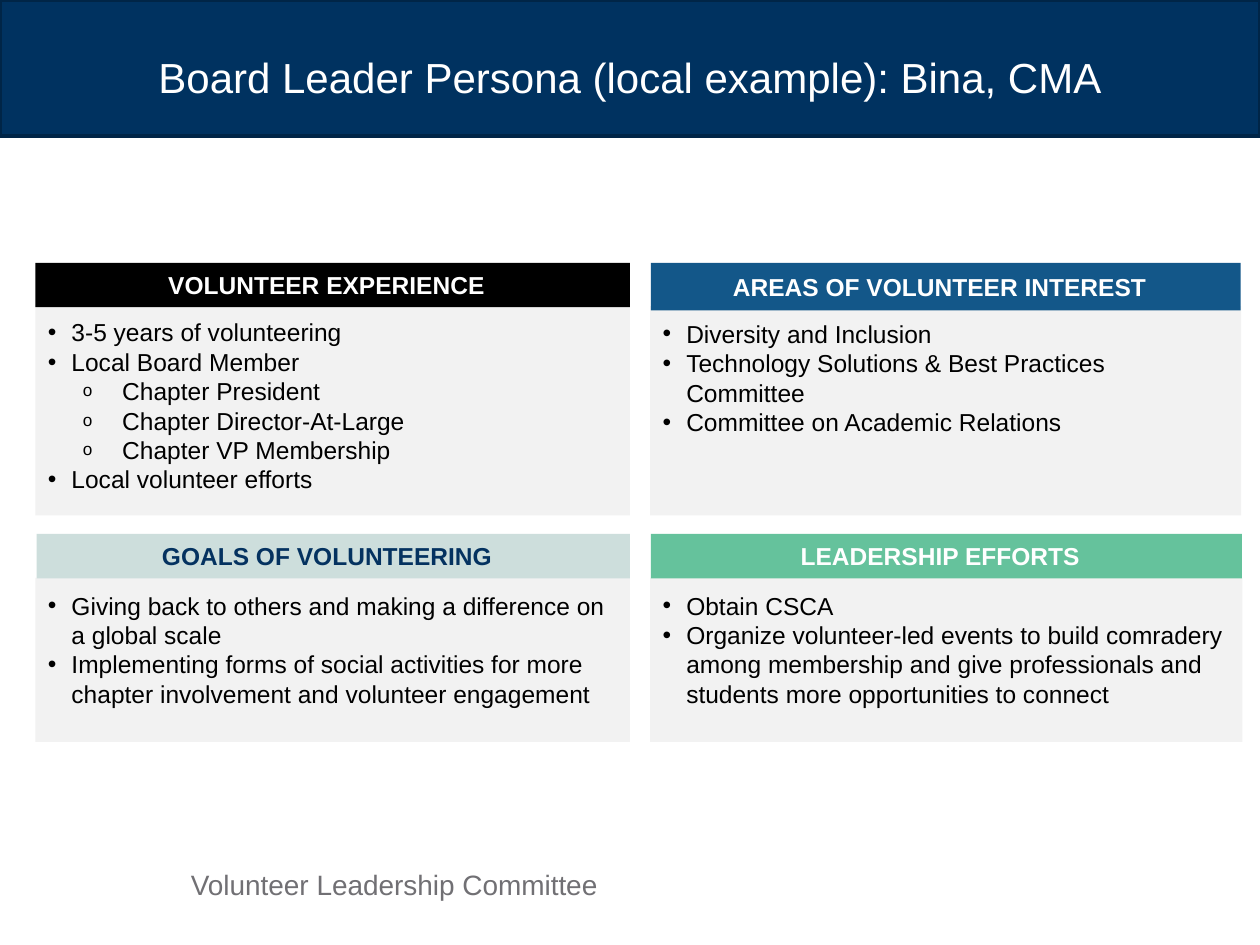
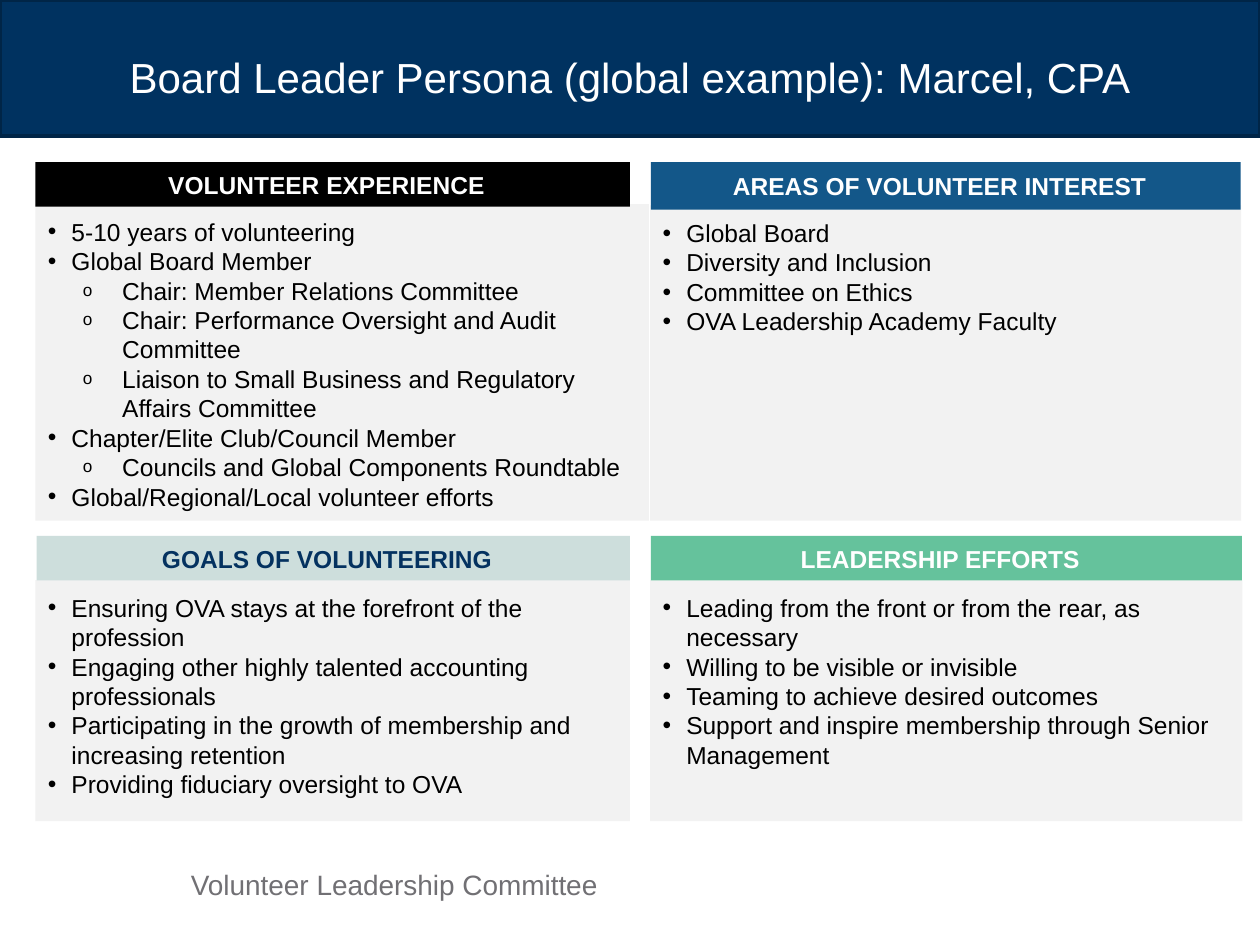
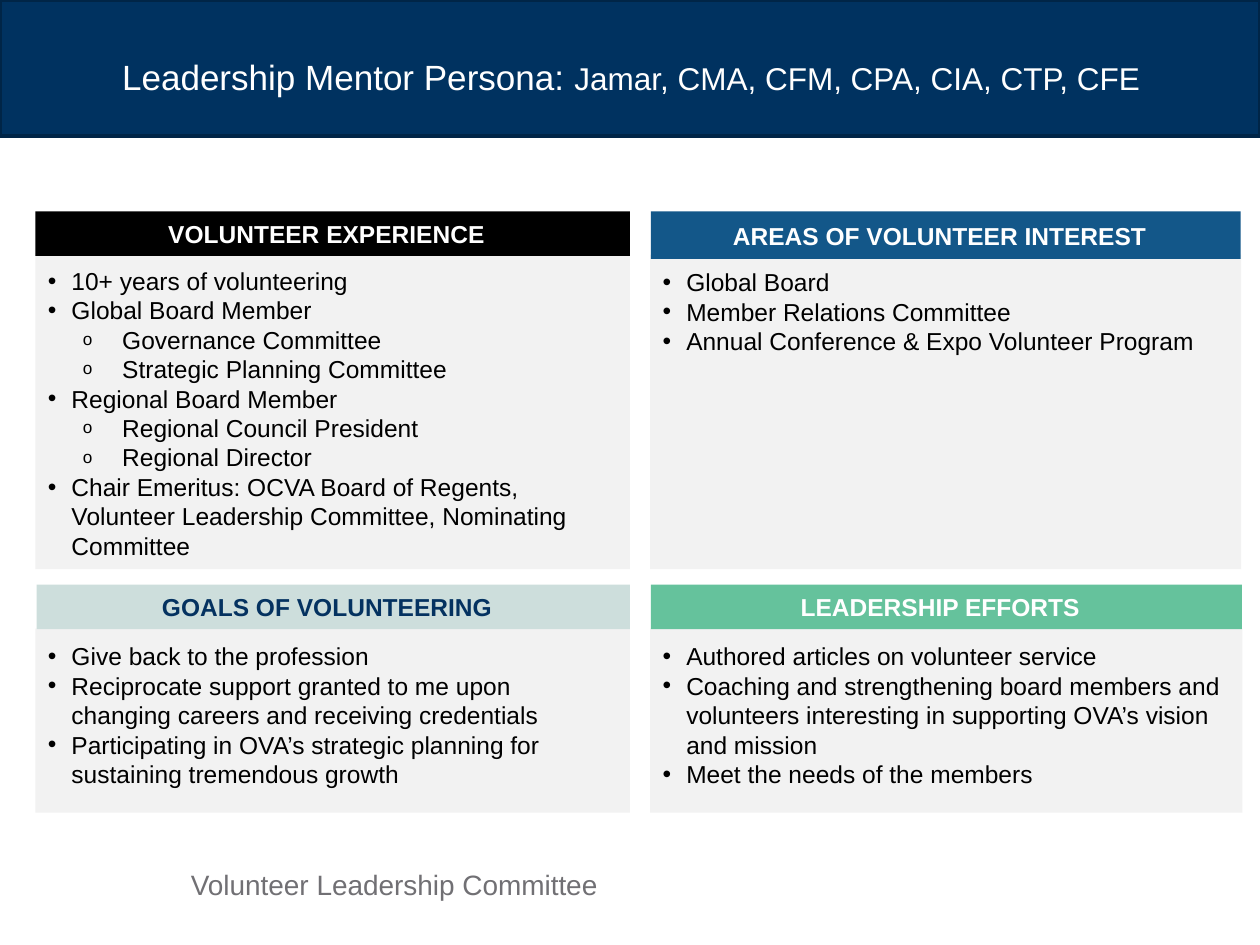
from dataclasses import dataclass
from typing import Any

from lxml import etree
from pptx import Presentation
from pptx.dml.color import RGBColor
from pptx.enum.shapes import MSO_SHAPE as Preset
from pptx.enum.text import MSO_ANCHOR as Anchor, MSO_AUTO_SIZE as AutoSize, PP_ALIGN as Align
from pptx.oxml.ns import qn
from pptx.util import Pt

NAVY = RGBColor(0x00, 0x32, 0x60)
NAVY_EDGE = RGBColor(0x00, 0x25, 0x47)
NAVY_TEXT = RGBColor(0x04, 0x32, 0x60)
BLUE = RGBColor(0x13, 0x57, 0x89)
MIST = RGBColor(0xCD, 0xDE, 0xDC)
GREEN = RGBColor(0x65, 0xC2, 0x9C)
PANEL_GREY = RGBColor(0xF2, 0xF2, 0xF2)
FOOTER_GREY = RGBColor(0x71, 0x70, 0x74)
BLACK = RGBColor(0x00, 0x00, 0x00)
WHITE = RGBColor(0xFF, 0xFF, 0xFF)

FONT = "Arial"
SLIDE_WIDTH, SLIDE_HEIGHT = 720, 540
FOOTER = "Volunteer Leadership Committee"


@dataclass(frozen=True)
class Box:
    left: float
    top: float
    width: float
    height: float


@dataclass(frozen=True)
class PanelStyle:
    heading: str
    fill: RGBColor
    text_color: RGBColor
    header_left: float
    header_width: float
    header_height: float
    body_left: float
    body_width: float
    body_drop: float  # from the top of the header to the top of the body


@dataclass(frozen=True)
class Bullet:
    character: str
    level: int
    margin: float
    hanging: float
    size_percent: int


@dataclass(frozen=True)
class Row:
    top: float
    bottom: float


@dataclass(frozen=True)
class Persona:
    title: list[tuple[str, float]]
    rows: tuple[Row, Row]
    panels: list[list[str]]  # a leading "- " marks a second-level item
    title_box: Box = Box(36, 9.4, 648, 68.4)
    experience_extra_width: float = 0


EXPERIENCE = PanelStyle("VOLUNTEER EXPERIENCE", BLACK, WHITE, 20.3, 339.7, 25.4, 20.3, 339.7, 24)
INTEREST = PanelStyle("AREAS OF VOLUNTEER INTEREST", BLUE, WHITE, 372, 337, 27.2, 371.6, 337.6, 24.7)
GOALS = PanelStyle("GOALS OF VOLUNTEERING", MIST, NAVY_TEXT, 20.9, 339.1, 25.4, 20.3, 339.7, 25.2)
EFFORTS = PanelStyle("LEADERSHIP EFFORTS", GREEN, WHITE, 372, 337.7, 25.4, 371.6, 338.4, 25.2)
PANEL_STYLES = [EXPERIENCE, INTEREST, GOALS, EFFORTS]

MAIN_BULLET = Bullet("•", 0, 13.5, 13.5, 100)
SUB_BULLET = Bullet("o", 1, 42.5, 22.5, 70)

PERSONAS = [
    Persona(
        [("Board Leader Persona (local example): Bina, CMA", 24)],
        (Row(150.2, 294.5), Row(305.1, 424)),
        [
            ["3-5 years of volunteering", "Local Board Member", "- Chapter President",
             "- Chapter Director-At-Large", "- Chapter VP Membership", "Local volunteer efforts"],
            ["Diversity and Inclusion", "Technology Solutions & Best Practices Committee",
             "Committee on Academic Relations"],
            ["Giving back to others and making a difference on a global scale",
             "Implementing forms of social activities for more chapter involvement "
             "and volunteer engagement"],
            ["Obtain CSCA",
             "Organize volunteer-led events to build comradery among membership and give "
             "professionals and students more opportunities to connect"],
        ],
    ),
    Persona(
        [("Board Leader Persona (global example): Marcel, CPA", 24)],
        (Row(92.7, 297.5), Row(306.3, 469.2)),
        [
            ["5-10 years of volunteering", "Global Board Member",
             "- Chair: Member Relations Committee",
             "- Chair: Performance Oversight and Audit Committee",
             "- Liaison to Small Business and Regulatory Affairs Committee",
             "Chapter/Elite Club/Council Member",
             "- Councils and Global Components Roundtable",
             "Global/Regional/Local volunteer efforts"],
            ["Global Board", "Diversity and Inclusion", "Committee on Ethics",
             "OVA Leadership Academy Faculty"],
            ["Ensuring OVA stays at the forefront of the profession",
             "Engaging other highly talented accounting professionals",
             "Participating in the growth of membership and increasing retention",
             "Providing fiduciary oversight to OVA"],
            ["Leading from the front or from the rear, as necessary",
             "Willing to be visible or invisible", "Teaming to achieve desired outcomes",
             "Support and inspire membership through Senior Management"],
        ],
        experience_extra_width=10.9,
    ),
    Persona(
        [("Leadership Mentor Persona: ", 20), ("Jamar, CMA, CFM, CPA, CIA, CTP, CFE", 18)],
        (Row(120.8, 325.3), Row(334.1, 464.4)),
        [
            ["10+ years of volunteering", "Global Board Member", "- Governance Committee",
             "- Strategic Planning Committee", "Regional Board Member",
             "- Regional Council President", "- Regional Director",
             "Chair Emeritus: OCVA Board of Regents, Volunteer Leadership Committee, "
             "Nominating Committee"],
            ["Global Board", "Member Relations Committee",
             "Annual Conference & Expo Volunteer Program"],
            ["Give back to the profession",
             "Reciprocate support granted to me upon changing careers and receiving credentials",
             "Participating in OVA’s strategic planning for sustaining tremendous growth"],
            ["Authored articles on volunteer service",
             "Coaching and strengthening board members and volunteers interesting in "
             "supporting OVA’s vision and mission",
             "Meet the needs of the members"],
        ],
        title_box=Box(12.2, 9.4, 697, 68.4),
    ),
]


def set_attributes(target: Any, values: dict[str, Any]) -> None:
    for name, value in values.items():
        setattr(target, name, value)


def lengths(box: Box) -> list[int]:
    return [Pt(value) for value in (box.left, box.top, box.width, box.height)]


def add_run(paragraph: Any, text: str, size: float, color: RGBColor, bold: bool = False) -> None:
    run = paragraph.add_run()
    run.text = text
    set_attributes(run.font, {"name": FONT, "size": Pt(size), "bold": bold})
    run.font.color.rgb = color


def add_rectangle(slide: Any, box: Box, fill: RGBColor) -> Any:
    shape = slide.shapes.add_shape(Preset.RECTANGLE, *lengths(box))
    shape.shadow.inherit = False
    shape.fill.solid()
    shape.fill.fore_color.rgb = fill
    shape.line.fill.background()
    return shape


def add_band(slide: Any) -> None:
    """Draw the title band behind everything else."""
    band = add_rectangle(slide, Box(0, 0, SLIDE_WIDTH, 77.8), NAVY)
    band.line.color.rgb = NAVY_EDGE
    band.line.width = Pt(2)
    slide.shapes._spTree.insert(2, band._element)


def format_title(slide: Any, persona: Persona) -> None:
    title = slide.shapes.title
    box = lengths(persona.title_box)
    set_attributes(title, dict(zip(("left", "top", "width", "height"), box)))
    set_attributes(title.text_frame, {
        "word_wrap": True, "auto_size": AutoSize.NONE, "vertical_anchor": Anchor.MIDDLE})
    paragraph = title.text_frame.paragraphs[0]
    paragraph.alignment = Align.CENTER
    for text, size in persona.title:
        add_run(paragraph, text, size, WHITE)


def set_bullet(paragraph: Any, bullet: Bullet) -> None:
    paragraph.level = bullet.level
    properties = paragraph._p.get_or_add_pPr()
    properties.set("marL", str(Pt(bullet.margin)))
    properties.set("indent", str(-Pt(bullet.hanging)))
    color = etree.SubElement(properties, qn("a:buClr"))
    etree.SubElement(color, qn("a:srgbClr"), val=str(BLACK))
    etree.SubElement(properties, qn("a:buSzPct"), val=str(bullet.size_percent * 1000))
    etree.SubElement(properties, qn("a:buFont"), typeface=FONT)
    etree.SubElement(properties, qn("a:buChar"), char=bullet.character)


def add_panel_body(slide: Any, box: Box, items: list[str]) -> None:
    frame = add_rectangle(slide, box, PANEL_GREY).text_frame
    set_attributes(frame, {
        "word_wrap": True, "vertical_anchor": Anchor.TOP, "margin_left": Pt(7.2),
        "margin_top": Pt(7.2), "margin_right": Pt(7.2), "margin_bottom": Pt(3.6)})
    for index, item in enumerate(items):
        paragraph = frame.add_paragraph() if index else frame.paragraphs[0]
        paragraph.alignment = Align.LEFT
        set_bullet(paragraph, SUB_BULLET if item.startswith("- ") else MAIN_BULLET)
        add_run(paragraph, item.removeprefix("- "), 14, BLACK)


def add_panel_header(slide: Any, style: PanelStyle, top: float) -> None:
    box = Box(style.header_left, top, style.header_width, style.header_height)
    frame = add_rectangle(slide, box, style.fill).text_frame
    set_attributes(frame, {
        "word_wrap": True, "vertical_anchor": Anchor.MIDDLE, "margin_left": 0,
        "margin_top": Pt(3.6), "margin_right": Pt(7.2), "margin_bottom": Pt(3.6)})
    paragraph = frame.paragraphs[0]
    paragraph.alignment = Align.CENTER
    add_run(paragraph, style.heading, 14, style.text_color, bold=True)


def add_panels(slide: Any, persona: Persona) -> None:
    """Draw the two-by-two grid, all bodies first and the headers over them."""
    for index, (style, items) in enumerate(zip(PANEL_STYLES, persona.panels)):
        row = persona.rows[index // 2]
        top = row.top + style.body_drop
        extra = persona.experience_extra_width if style is EXPERIENCE else 0
        add_panel_body(slide, Box(style.body_left, top, style.body_width + extra, row.bottom - top), items)
    for index, style in enumerate(PANEL_STYLES):
        add_panel_header(slide, style, persona.rows[index // 2].top)


def add_footer(slide: Any) -> None:
    frame = slide.shapes.add_textbox(*lengths(Box(102, 492, 298, 26.6))).text_frame
    set_attributes(frame, {"word_wrap": True, "auto_size": AutoSize.SHAPE_TO_FIT_TEXT})
    add_run(frame.paragraphs[0], FOOTER, 16, FOOTER_GREY)


def main() -> None:
    presentation = Presentation()
    set_attributes(presentation, {"slide_width": Pt(SLIDE_WIDTH), "slide_height": Pt(SLIDE_HEIGHT)})
    title_only = presentation.slide_layouts[5]
    for persona in PERSONAS:
        slide = presentation.slides.add_slide(title_only)
        add_band(slide)
        format_title(slide, persona)
        add_panels(slide, persona)
        add_footer(slide)
    presentation.save("out.pptx")


if __name__ == "__main__":
    main()
